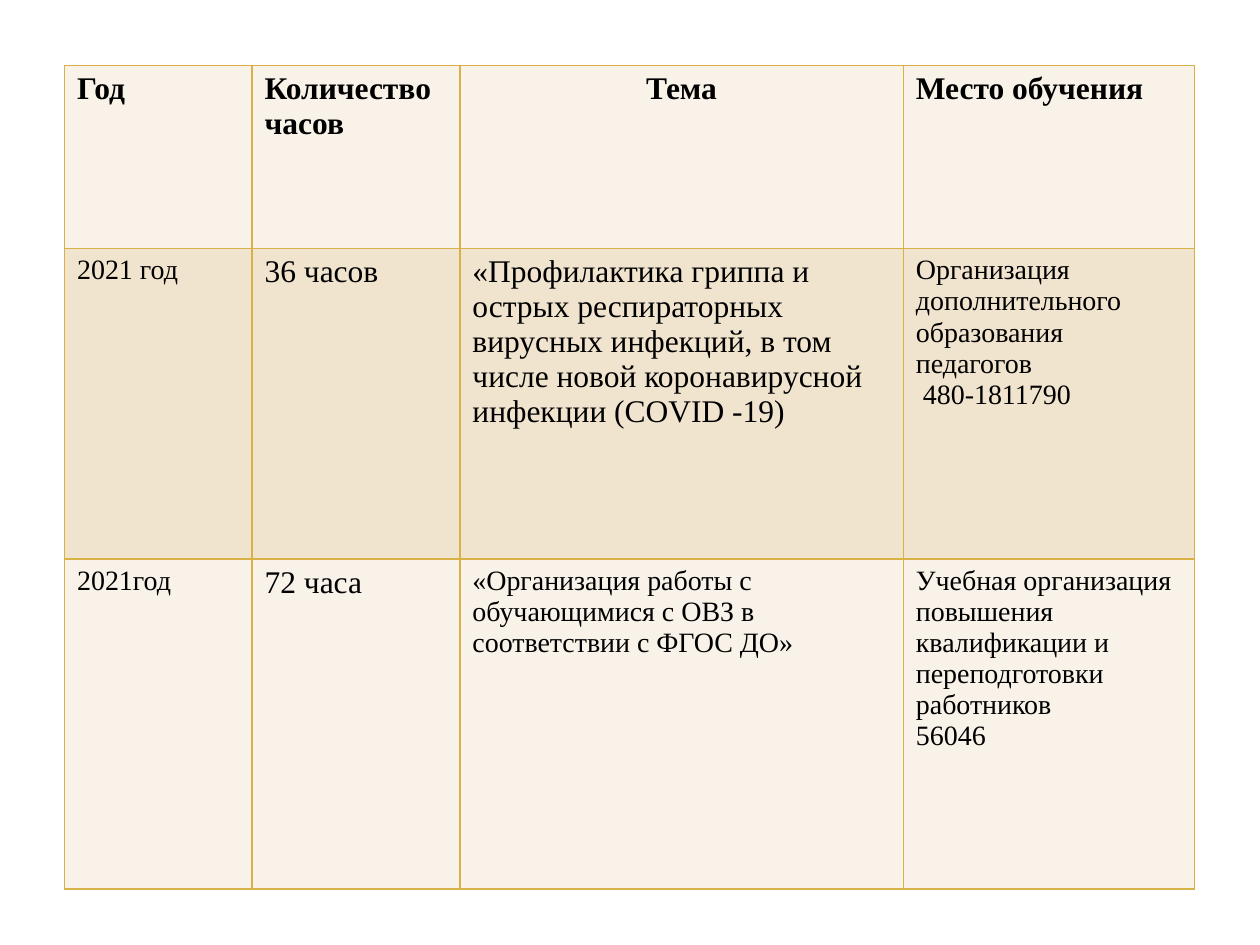
from dataclasses import dataclass

from lxml import etree
from pptx import Presentation
from pptx.dml.color import RGBColor
from pptx.enum.text import PP_ALIGN
from pptx.oxml.ns import qn
from pptx.util import Cm, Pt

LEFT, CENTER = PP_ALIGN.LEFT, PP_ALIGN.CENTER
BLACK = RGBColor(0x00, 0x00, 0x00)
GOLD = RGBColor(0xD9, 0xB2, 0x47)
CREAM = RGBColor(0xF8, 0xF2, 0xE9)
SAND = RGBColor(0xF1, 0xE4, 0xCF)
FONT = "Times New Roman"
BORDER_SIDES = ("a:lnL", "a:lnR", "a:lnT", "a:lnB")
COLUMN_WIDTHS = (3.78, 4.19, 8.94, 5.87)
ROW_HEIGHTS = (3.69, 6.26, 6.65)


@dataclass
class Entry:
    lines: tuple[str, ...]
    size: int = 16
    bold: bool = False
    align: PP_ALIGN = LEFT


def heading(*lines: str, align: PP_ALIGN = LEFT) -> Entry:
    return Entry(lines, size=18, bold=True, align=align)


COURSES = (
    (
        heading("Год"),
        heading("Количество", "часов"),
        heading("Тема", align=CENTER),
        heading("Место обучения"),
    ),
    (
        Entry(("2021 год",)),
        Entry(("36 часов",), size=18),
        Entry(("«Профилактика гриппа и острых респираторных вирусных инфекций, "
               "в том числе новой коронавирусной инфекции (COVID -19)",), size=18),
        Entry(("Организация дополнительного образования педагогов", " 480-1811790")),
    ),
    (
        Entry(("2021год",)),
        Entry(("72 часа",), size=18),
        Entry(("«Организация работы с обучающимися с ОВЗ в соответствии с ФГОС ДО»",)),
        Entry(("Учебная организация повышения квалификации и переподготовки работников", "56046")),
    ),
)


def add_borders(cell) -> None:
    properties = cell._tc.get_or_add_tcPr()
    for side in BORDER_SIDES:
        line = etree.SubElement(properties, qn(side), w=str(Pt(1)))
        fill = etree.SubElement(line, qn("a:solidFill"))
        etree.SubElement(fill, qn("a:srgbClr"), val=str(GOLD))


def fill_cell(cell, entry: Entry, color: RGBColor) -> None:
    add_borders(cell)
    cell.fill.solid()
    cell.fill.fore_color.rgb = color
    cell.text = "\n".join(entry.lines)
    font_format = {"name": FONT, "size": Pt(entry.size), "bold": entry.bold}
    for para in cell.text_frame.paragraphs:
        para.alignment = entry.align
        for span in para.runs:
            for attribute, value in font_format.items():
                setattr(span.font, attribute, value)
            span.font.color.rgb = BLACK


def main() -> None:
    deck = Presentation()
    deck.slide_width, deck.slide_height = Cm(25.4), Cm(19.05)
    page = deck.slides.add_slide(deck.slide_layouts[6])

    # Table grid
    table = page.shapes.add_table(
        len(ROW_HEIGHTS), len(COLUMN_WIDTHS), Cm(1.3), Cm(1.32),
        Cm(sum(COLUMN_WIDTHS)), Cm(sum(ROW_HEIGHTS)),
    ).table
    for column, width in zip(table.columns, COLUMN_WIDTHS):
        column.width = Cm(width)
    for row, height in zip(table.rows, ROW_HEIGHTS):
        row.height = Cm(height)

    # Training courses, with alternating row colours
    for index, (row, entries) in enumerate(zip(table.rows, COURSES)):
        for cell, entry in zip(row.cells, entries):
            fill_cell(cell, entry, SAND if index % 2 else CREAM)

    deck.save("out.pptx")


if __name__ == "__main__":
    main()
